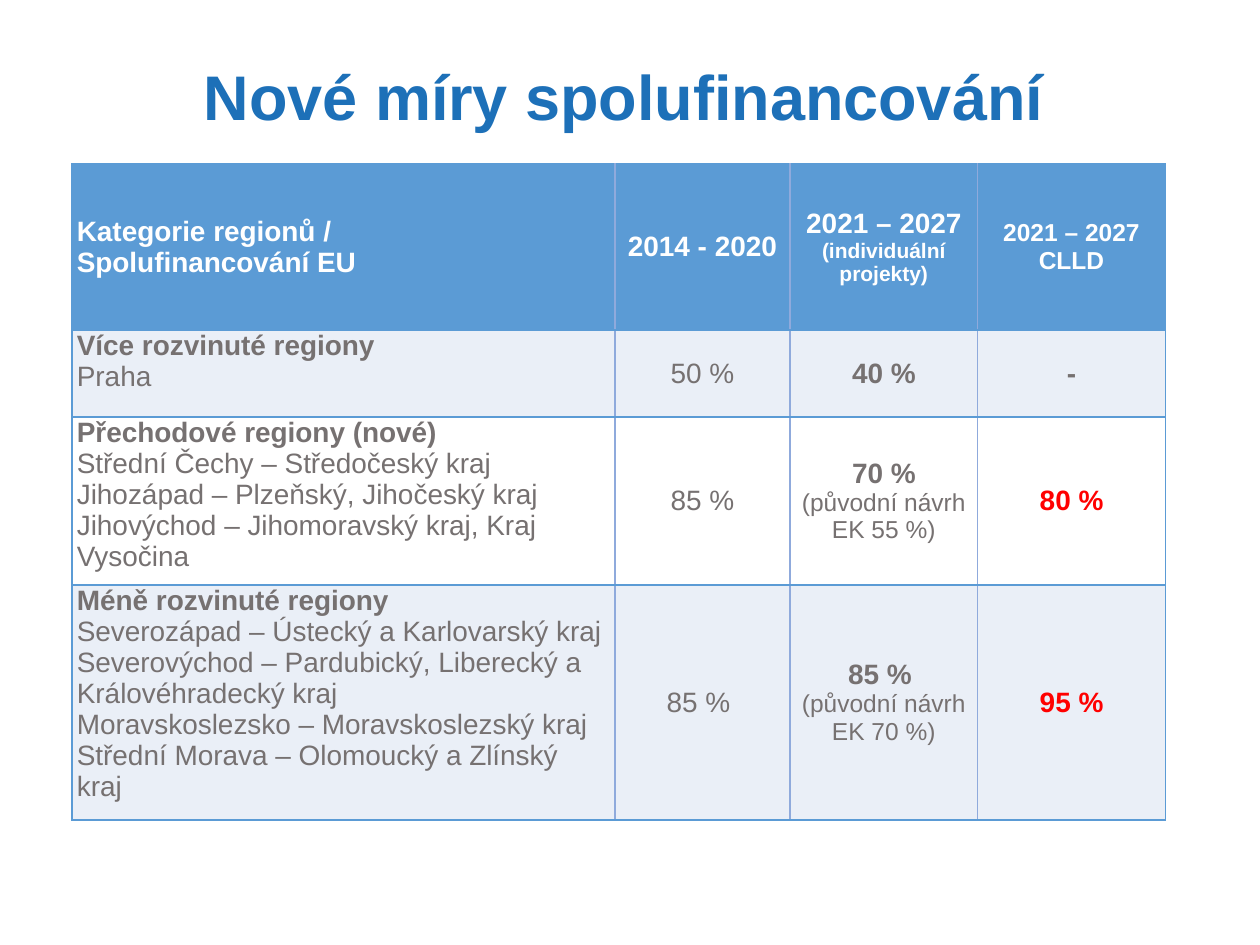
from typing import NamedTuple

from lxml.etree import SubElement
from pptx import Presentation
from pptx.dml.color import RGBColor
from pptx.enum.text import MSO_ANCHOR, PP_ALIGN
from pptx.oxml.ns import qn
from pptx.util import Inches, Pt

TITLE = RGBColor(0x1D, 0x70, 0xB8)
BLUE = RGBColor(0x5B, 0x9B, 0xD5)
PALE = RGBColor(0x8F, 0xAA, 0xDC)
BAND = RGBColor(0xEA, 0xEF, 0xF7)
WHITE = RGBColor(0xFF, 0xFF, 0xFF)
GREY = RGBColor(0x76, 0x71, 0x71)
RED = RGBColor(0xFF, 0x00, 0x00)

COLS = (4.31, 1.39, 1.49, 1.49)
ROWS = (1.32, 0.69, 1.26, 1.79)
FILLS = (BLUE, BAND, WHITE, BAND)


class Run(NamedTuple):
    text: str
    size: int = 16
    bold: bool = False
    color: RGBColor = GREY


# A cell is a list of paragraphs, a paragraph is a list of runs.
Cell = list[list[Run]]


def head(*runs: tuple[str, int]) -> list[Run]:
    return [Run(text, size, True, WHITE) for text, size in runs]


def region(name: str, *lines: str) -> Cell:
    return [[Run(name, bold=True)], *([Run(line)] for line in lines)]


def rate(text: str, note: str = "", bold: bool = True, color: RGBColor = GREY) -> Cell:
    return [[Run(text, 16, bold, color)]] + ([[Run(note, 14)]] if note else [])


DATA: list[list[Cell]] = [
    [
        [head(("Kategorie regionů /", 16)), head(("Spolufinancování EU", 16))],
        [head(("2014 - 2020", 16))],
        [head(("2021 – 2027\n", 16), ("(individuální projekty)", 12))],
        [head(("2021 – 2027 CLLD", 14))],
    ],
    [
        region("Více rozvinuté regiony", "Praha"),
        rate("50 %", bold=False),
        rate("40 %"),
        rate("-"),
    ],
    [
        region(
            "Přechodové regiony (nové)",
            "Střední Čechy – Středočeský kraj",
            "Jihozápad – Plzeňský, Jihočeský kraj",
            "Jihovýchod – Jihomoravský kraj, Kraj Vysočina",
        ),
        rate("85 %", bold=False),
        rate("70 %", "(původní návrh EK 55 %)"),
        rate("80 %", color=RED),
    ],
    [
        region(
            "Méně rozvinuté regiony",
            "Severozápad – Ústecký a Karlovarský kraj",
            "Severovýchod – Pardubický, Liberecký a Královéhradecký kraj\n"
            "Moravskoslezsko – Moravskoslezský kraj",
            "Střední Morava – Olomoucký a Zlínský kraj",
        ),
        rate("85 % ", bold=False),
        rate("85 % ", "(původní návrh EK 70 %)"),
        rate("95 %", color=RED),
    ],
]


def write(frame, paras: Cell, align: PP_ALIGN) -> None:
    for i, runs in enumerate(paras):
        para = frame.add_paragraph() if i else frame.paragraphs[0]
        para.alignment = align
        for item in runs:
            for j, text in enumerate(item.text.split("\n")):
                if j:
                    para.add_line_break()
                if not text:
                    continue
                run = para.add_run()
                run.text = text
                style = {"name": "Arial", "size": Pt(item.size), "bold": item.bold}
                for key, value in style.items():
                    setattr(run.font, key, value)
                run.font.color.rgb = item.color


def edge(cell, sides: dict[str, RGBColor]) -> None:
    """Draw cell borders; call before the fill, which must follow them in the XML."""
    props = cell._tc.get_or_add_tcPr()
    for side, color in sides.items():
        line = SubElement(props, qn(f"a:ln{side}"), w=str(Pt(1)))
        fill = SubElement(line, qn("a:solidFill"))
        SubElement(fill, qn("a:srgbClr"), val=str(color))


def add_title(slide) -> None:
    box = slide.shapes.add_textbox(Inches(0.66), Inches(0.29), Inches(8.58), Inches(1.01))
    frame = box.text_frame
    frame.word_wrap = True
    frame.vertical_anchor = MSO_ANCHOR.MIDDLE
    write(frame, [[Run("Nové míry spolufinancování", 36, True, TITLE)]], PP_ALIGN.CENTER)
    frame.paragraphs[0].line_spacing = 0.9


def add_rates(slide) -> None:
    table = slide.shapes.add_table(
        len(ROWS), len(COLS), Inches(0.57), Inches(1.3),
        Inches(sum(COLS)), Inches(sum(ROWS)),
    ).table
    table.horz_banding = False
    for col, width in zip(table.columns, COLS):
        col.width = Inches(width)
    for row, height in zip(table.rows, ROWS):
        row.height = Inches(height)

    last = len(COLS) - 1
    margins = {"margin_left": 0.04, "margin_right": 0.04, "margin_top": 0, "margin_bottom": 0}
    for r, line in enumerate(DATA):
        for c, paras in enumerate(line):
            cell = table.cell(r, c)
            for key, value in margins.items():
                setattr(cell, key, Inches(value))
            top = r > 0 and c == 0
            cell.vertical_anchor = MSO_ANCHOR.TOP if top else MSO_ANCHOR.MIDDLE
            edge(cell, {
                "L": PALE if c else BLUE,
                "R": PALE if c < last else BLUE,
                "T": BLUE,
                "B": BLUE,
            })
            cell.fill.solid()
            cell.fill.fore_color.rgb = FILLS[r]
            write(cell.text_frame, paras, PP_ALIGN.CENTER if c else PP_ALIGN.LEFT)


def main() -> None:
    deck = Presentation()
    deck.slide_width, deck.slide_height = Inches(10), Inches(7.5)
    slide = deck.slides.add_slide(deck.slide_layouts[6])
    add_title(slide)
    add_rates(slide)
    deck.save("out.pptx")


if __name__ == "__main__":
    main()
